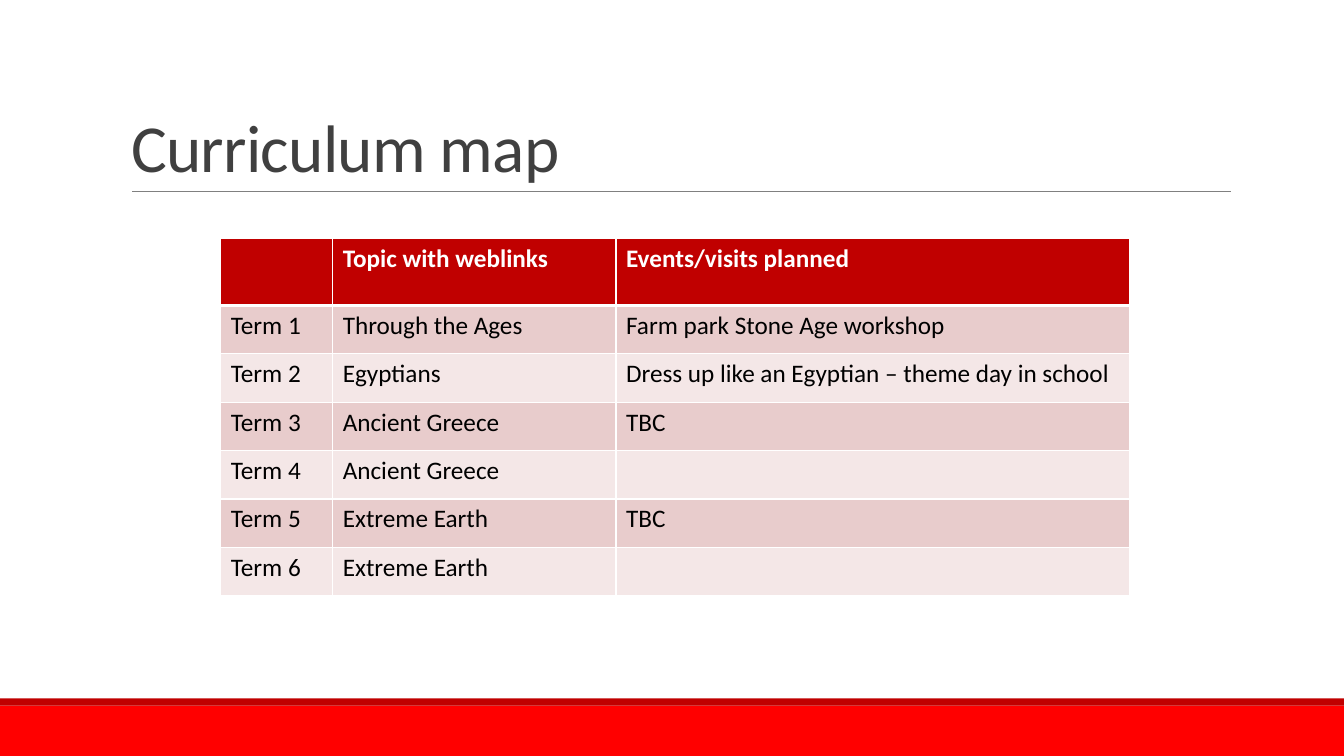
from dataclasses import dataclass

from lxml import etree
from pptx import Presentation, util as u
from pptx.dml.color import RGBColor
from pptx.enum import shapes, text
from pptx.oxml import ns


@dataclass(frozen=True)
class Theme:
    font: str = "Calibri"
    title_size: int = 48
    table_size: int = 18
    red: str = "FF0000"
    dark_red: str = "C00000"
    bands: tuple = ("E8CCCC", "F4E7E7")
    title: str = "404040"
    rule: str = "808080"
    white: str = "FFFFFF"
    black: str = "000000"


theme = Theme()


def style_text(paragraph, size, color, bold=False):
    font = paragraph.font
    font.name, font.size, font.bold = theme.font, u.Pt(size), bold
    font.color.rgb = RGBColor.from_string(color)


def add_border(cell, side, points):
    line = etree.SubElement(cell._tc.get_or_add_tcPr(), ns.qn(f"a:ln{side}"),
                            w=str(u.Pt(points)))
    fill = etree.SubElement(line, ns.qn("a:solidFill"))
    etree.SubElement(fill, ns.qn("a:srgbClr"), val=theme.white)


deck = Presentation()
deck.slide_width, deck.slide_height = u.Inches(13.33), u.Inches(7.5)
slide = deck.slides.add_slide(deck.slide_layouts[5])

# Footer bands
for top, height, color in ((7, 0.5, theme.red), (6.93, 0.07, theme.dark_red)):
    band = slide.shapes.add_shape(shapes.MSO_SHAPE.RECTANGLE, 0, u.Inches(top),
                                  deck.slide_width, u.Inches(height))
    band.shadow.inherit = False
    band.fill.solid()
    band.fill.fore_color.rgb = RGBColor.from_string(color)
    band.line.fill.background()

# Title and the rule below it
title = slide.shapes.title
title.left, title.top = u.Inches(1.2), u.Inches(0.31)
title.width, title.height = u.Inches(11), u.Inches(1.59)
title.text_frame.text = "Curriculum map"
title.text_frame.vertical_anchor = text.MSO_ANCHOR.BOTTOM
heading = title.text_frame.paragraphs[0]
heading.alignment = text.PP_ALIGN.LEFT
heading.line_spacing = 0.85
style_text(heading, theme.title_size, theme.title)
heading.runs[0].font._element.set("spc", "-50")

rule = slide.shapes.add_connector(shapes.MSO_CONNECTOR.STRAIGHT, u.Inches(1.31),
                                  u.Inches(1.9), u.Inches(12.21), u.Inches(1.9))
rule.line.color.rgb = RGBColor.from_string(theme.rule)
rule.line.width = u.Pt(0.5)
etree.SubElement(rule._element.spPr, ns.qn("a:effectLst"))

# Curriculum table
curriculum = (
    ("", "Topic with weblinks", "Events/visits planned"),
    ("Term 1", "Through the Ages", "Farm park Stone Age workshop"),
    ("Term 2", "Egyptians", "Dress up like an Egyptian – theme day in school"),
    ("Term 3", "Ancient Greece", "TBC"),
    ("Term 4", "Ancient Greece", ""),
    ("Term 5", "Extreme Earth", "TBC"),
    ("Term 6", "Extreme Earth", ""),
)
column_widths = (1.11, 2.81, 5.09)
header_height, term_height = 0.66, 0.48
terms = len(curriculum) - 1
table = slide.shapes.add_table(
    len(curriculum), len(column_widths), u.Inches(2.19), u.Inches(2.37),
    u.Inches(sum(column_widths)),
    u.Inches(header_height + terms * term_height)).table

for column, width in zip(table.columns, column_widths):
    column.width = u.Inches(width)

for r, entries in enumerate(curriculum):
    is_header = r == 0
    table.rows[r].height = u.Inches(header_height if is_header else term_height)
    for c, entry in enumerate(entries):
        cell = table.cell(r, c)
        cell.text = entry
        style_text(cell.text_frame.paragraphs[0], theme.table_size,
                   theme.white if is_header else theme.black, is_header)
        for side in "LRTB":
            under_header = (r, side) in ((0, "B"), (1, "T"))
            add_border(cell, side, 3 if under_header else 1)
        cell.fill.solid()
        cell.fill.fore_color.rgb = RGBColor.from_string(
            theme.dark_red if is_header else theme.bands[(r - 1) % 2])

deck.save("out.pptx")
